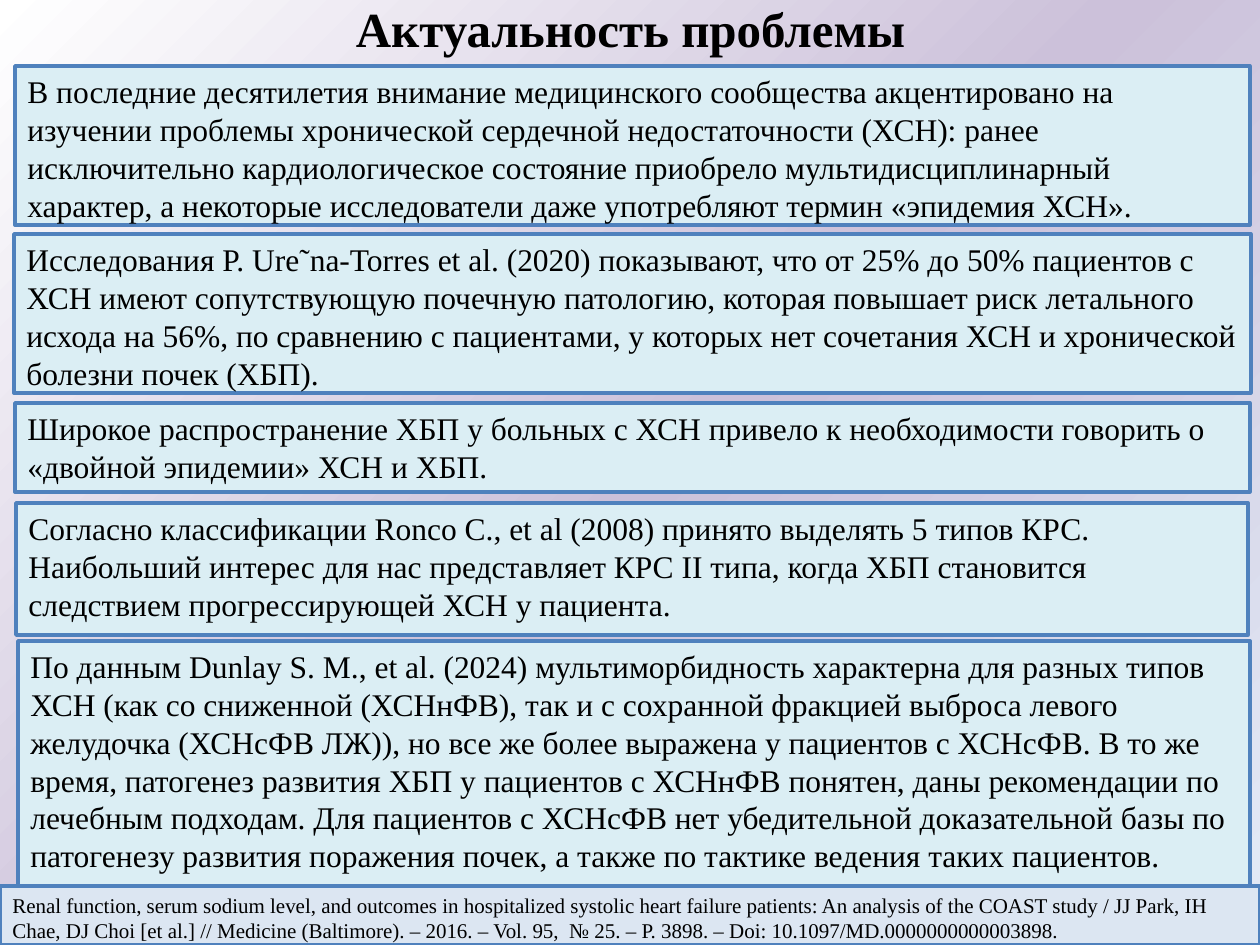
"""Build the slide on the relevance of combined heart failure and kidney disease."""
from lxml.etree import SubElement
from pptx import Presentation
from pptx.dml.color import RGBColor
from pptx.enum.shapes import MSO_SHAPE
from pptx.enum.text import MSO_ANCHOR, MSO_AUTO_SIZE, PP_ALIGN
from pptx.oxml.ns import qn
from pptx.util import Emu, Pt

TITLE = "Актуальность проблемы"
STATEMENTS = [
    ((15, 66, 1235, 159),
     "В последние десятилетия внимание медицинского сообщества акцентировано на изучении "
     "проблемы хронической сердечной недостаточности (ХСН): ранее исключительно "
     "кардиологическое состояние приобрело мультидисциплинарный характер, а некоторые "
     "исследователи даже употребляют термин «эпидемия ХСН»."),
    ((14, 234, 1237, 159),
     "Исследования P. Ure˜na-Torres et al. (2020) показывают, что от 25% до 50% пациентов "
     "с ХСН имеют сопутствующую почечную патологию, которая повышает риск летального исхода "
     "на 56%, по сравнению с пациентами, у которых нет сочетания ХСН и хронической болезни "
     "почек (ХБП)."),
    ((15, 403, 1235, 89),
     "Широкое распространение ХБП у больных с ХСН привело к необходимости говорить о "
     "«двойной эпидемии» ХСН и ХБП."),
    ((16, 503, 1232, 132),
     "Согласно классификации Ronco C., et al (2008) принято выделять 5 типов КРС. "
     "Наибольший интерес для нас представляет КРС II типа, когда ХБП становится следствием "
     "прогрессирующей ХСН у пациента."),
    ((18, 641, 1232, 245),
     "По данным Dunlay S. M., et al. (2024) мультиморбидность характерна для разных типов "
     "ХСН (как со сниженной (ХСНнФВ), так и с сохранной фракцией выброса левого желудочка "
     "(ХСНсФВ ЛЖ)), но все же более выражена у пациентов с ХСНсФВ. В то же время, патогенез "
     "развития ХБП у пациентов с ХСНнФВ понятен, даны рекомендации по лечебным подходам. "
     "Для пациентов с ХСНсФВ нет убедительной доказательной базы по патогенезу развития "
     "поражения почек, а также по тактике ведения таких пациентов."),
]
CITATION = (
    (0, 886, 1260, 59),
    "Renal function, serum sodium level, and outcomes in hospitalized systolic heart failure "
    "patients: An analysis of the COAST study / JJ Park, IH Chae, DJ Choi [et al.] // Medicine "
    "(Baltimore). – 2016. – Vol. 95,  № 25. – Р. 3898. – Doi: 10.1097/MD.0000000000003898.")

FONT = "Times New Roman"
BLACK = RGBColor(0x00, 0x00, 0x00)
BLUE = RGBColor(0x4F, 0x81, 0xBD)
PALE_AQUA = RGBColor(0xDB, 0xEE, 0xF4)
PALE_BLUE = RGBColor(0xDC, 0xE6, 0xF2)
BACKGROUND_STOPS = [
    (0, RGBColor(0xFF, 0xFF, 0xFF)),
    (51, RGBColor(0xCC, 0xC1, 0xDA)),
    (97, RGBColor(0xE1, 0xE8, 0xF5)),
]


def px(length):
    return Emu(round(length * 914400 / 126))


def set_font(paragraph, size, bold=False):
    paragraph.font.name = FONT
    paragraph.font.size = Pt(size)
    paragraph.font.bold = bold
    paragraph.font.color.rgb = BLACK


def paint_background(slide):
    slide.background.fill.gradient()
    gradient = slide.background._cSld.find(".//" + qn("a:gradFill"))
    for child in list(gradient):
        gradient.remove(child)
    stops = SubElement(gradient, qn("a:gsLst"))
    for percent, color in BACKGROUND_STOPS:
        stop = SubElement(stops, qn("a:gs"), pos=str(percent * 1000))
        SubElement(stop, qn("a:srgbClr"), val=str(color))
    radial = SubElement(gradient, qn("a:path"), {"path": "circle"})
    SubElement(radial, qn("a:fillToRect"), r="100000", b="100000")


def add_title(slide):
    title = slide.shapes.title
    title.left, title.top, title.width, title.height = map(px, (54, 0, 1153, 55))
    frame = title.text_frame
    frame.text = TITLE
    frame.auto_size = MSO_AUTO_SIZE.NONE
    frame.vertical_anchor = MSO_ANCHOR.MIDDLE
    frame.paragraphs[0].alignment = PP_ALIGN.CENTER
    set_font(frame.paragraphs[0], 28, bold=True)


def add_panel(slide, box, text, size, fill):
    panel = slide.shapes.add_shape(MSO_SHAPE.RECTANGLE, *map(px, box))
    panel.shadow.inherit = False
    panel.fill.solid()
    panel.fill.fore_color.rgb = fill
    panel.line.color.rgb = BLUE
    panel.line.width = Pt(2)
    frame = panel.text_frame
    frame.word_wrap = True
    frame.vertical_anchor = MSO_ANCHOR.TOP
    frame.text = text
    paragraph = frame.paragraphs[0]
    paragraph.alignment = PP_ALIGN.LEFT
    paragraph.space_before = Pt(size * 0.2)
    set_font(paragraph, size)


def main():
    deck = Presentation()
    deck.slide_width, deck.slide_height = px(1260), px(945)
    slide = deck.slides.add_slide(deck.slide_layouts[5])
    paint_background(slide)
    add_title(slide)
    for box, text in STATEMENTS:
        add_panel(slide, box, text, 18, PALE_AQUA)
    add_panel(slide, *CITATION, 12, PALE_BLUE)
    deck.save("out.pptx")


if __name__ == "__main__":
    main()
